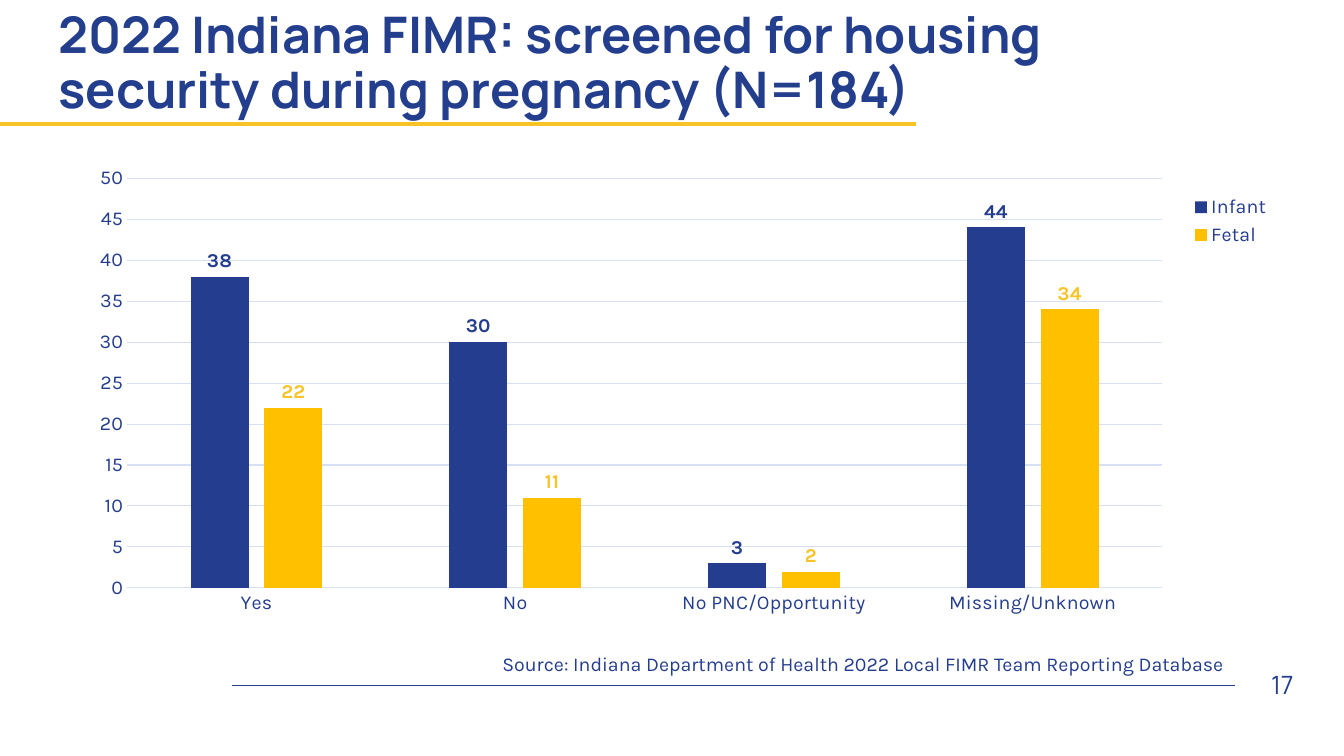
from dataclasses import dataclass

from lxml import etree
from pptx import Presentation
from pptx.chart.chart import Chart
from pptx.chart.data import CategoryChartData
from pptx.dml.color import RGBColor
from pptx.enum.chart import (XL_CHART_TYPE, XL_LABEL_POSITION,
                             XL_LEGEND_POSITION, XL_TICK_MARK)
from pptx.enum.shapes import MSO_CONNECTOR
from pptx.enum.text import MSO_ANCHOR, MSO_AUTO_SIZE, PP_ALIGN
from pptx.oxml import parse_xml
from pptx.oxml.ns import nsdecls, qn
from pptx.slide import Slide
from pptx.text.text import Font, TextFrame
from pptx.util import Cm, Pt

COLUMNS = XL_CHART_TYPE.COLUMN_CLUSTERED
OUTSIDE_END = XL_LABEL_POSITION.OUTSIDE_END
LEGEND_RIGHT = XL_LEGEND_POSITION.RIGHT
NO_TICKS = XL_TICK_MARK.NONE
STRAIGHT = MSO_CONNECTOR.STRAIGHT
TOP, MIDDLE = MSO_ANCHOR.TOP, MSO_ANCHOR.MIDDLE
NO_AUTOFIT = MSO_AUTO_SIZE.NONE
LEFT, RIGHT = PP_ALIGN.LEFT, PP_ALIGN.RIGHT

COLORS = {"navy": "243E8E", "infant": "243D8E", "gold": "F7C327",
          "fetal": "FFC000", "grid": "D7DFF5"}
HEADING_FONT, BODY_FONT = "Manrope", "Karla"
CATEGORIES = ["Yes", "No", "No PNC/Opportunity", "Missing/Unknown"]


@dataclass(frozen=True)
class Box:
    left: float
    top: float
    width: float
    height: float


@dataclass(frozen=True)
class Rule:
    left: float
    right: float
    top: float
    color: str
    weight: float


@dataclass(frozen=True)
class Note:
    text: str
    box: Box
    font: str
    size: float
    anchor: MSO_ANCHOR


@dataclass(frozen=True)
class Deaths:
    name: str
    counts: tuple[int, ...]
    fill: str
    label: str


RULES = [Rule(5.84, 31.12, 17.27, "navy", 1), Rule(0, 23.09, 3.12, "gold", 3)]
TITLE = Note("2022 Indiana FIMR: screened for housing security during pregnancy (N=184)",
             Box(1.22, 0.58, 30.33, 2.11), HEADING_FONT, 36, MIDDLE)
NOTES = [
    Note("17", Box(31.12, 16.74, 1.73, 1.02), HEADING_FONT, 18, MIDDLE),
    Note("Source: Indiana Department of Health 2022 Local FIMR Team Reporting Database",
         Box(7.49, 16.31, 23.62, 0.86), BODY_FONT, 14, TOP),
]
SERIES = [
    Deaths("Infant", (38, 30, 3, 44), "infant", "infant"),
    Deaths("Fetal", (22, 11, 2, 34), "fetal", "gold"),
]
CHART_BOX = Box(1.9, 3.99, 30.33, 11.73)
PLOT_SHARE = Box(0.043, 0.043, 0.86, 0.88)
LEGEND_SHARE = Box(0.92, 0.07, 0.08, 0.13)


def rgb(name: str) -> RGBColor:
    return RGBColor.from_string(COLORS[name])


def style_font(font: Font, name: str, size: float, color: str, bold: bool = False) -> None:
    font.name, font.size, font.bold = name, Pt(size), bold
    font.color.rgb = rgb(color)


def lengths(box: Box) -> tuple[Cm, Cm, Cm, Cm]:
    return Cm(box.left), Cm(box.top), Cm(box.width), Cm(box.height)


def write(frame: TextFrame, note: Note, align: PP_ALIGN, bold: bool = False) -> None:
    frame.word_wrap = True
    frame.auto_size = NO_AUTOFIT
    frame.vertical_anchor = note.anchor
    paragraph = frame.paragraphs[0]
    paragraph.alignment = align
    run = paragraph.add_run()
    run.text = note.text
    style_font(run.font, note.font, note.size, "navy", bold)


def add_title(slide: Slide) -> None:
    title = slide.shapes.title
    title.left, title.top, title.width, title.height = lengths(TITLE.box)
    write(title.text_frame, TITLE, LEFT, True)
    title.text_frame.paragraphs[0].line_spacing = 0.9


def add_rule(slide: Slide, rule: Rule) -> None:
    line = slide.shapes.add_connector(STRAIGHT, Cm(rule.left), Cm(rule.top),
                                      Cm(rule.right), Cm(rule.top))
    line.line.color.rgb = rgb(rule.color)
    line.line.width = Pt(rule.weight)
    etree.SubElement(line._element.spPr, qn("a:effectLst"))


def add_note(slide: Slide, note: Note) -> None:
    write(slide.shapes.add_textbox(*lengths(note.box)).text_frame, note, RIGHT)


def manual_layout(share: Box, inner: bool) -> etree._Element:
    target = '<c:layoutTarget val="inner"/>' if inner else ""
    return parse_xml(
        f'<c:layout {nsdecls("c")}><c:manualLayout>{target}'
        '<c:xMode val="edge"/><c:yMode val="edge"/>'
        f'<c:x val="{share.left}"/><c:y val="{share.top}"/>'
        f'<c:w val="{share.width}"/><c:h val="{share.height}"/>'
        '</c:manualLayout></c:layout>')


def place_parts(chart: Chart) -> None:
    plot_area = chart._chartSpace.chart.plotArea
    for layout in plot_area.findall(qn("c:layout")):
        plot_area.remove(layout)
    plot_area.insert(0, manual_layout(PLOT_SHARE, True))
    legend = chart.legend._element
    for layout in legend.findall(qn("c:layout")):
        legend.remove(layout)
    legend.find(qn("c:legendPos")).addnext(manual_layout(LEGEND_SHARE, False))


def style_axes(chart: Chart) -> None:
    counts, outcomes = chart.value_axis, chart.category_axis
    for axis in (counts, outcomes):
        axis.major_tick_mark = axis.minor_tick_mark = NO_TICKS
        style_font(axis.tick_labels.font, BODY_FONT, 14, "infant")
    counts.minimum_scale, counts.maximum_scale, counts.major_unit = 0, 50, 5
    counts.format.line.fill.background()
    for line in (counts.major_gridlines.format.line, outcomes.format.line):
        line.color.rgb = rgb("grid")
        line.width = Pt(0.75)


def add_screening_chart(slide: Slide) -> None:
    data = CategoryChartData()
    data.categories = CATEGORIES
    for deaths in SERIES:
        data.add_series(deaths.name, deaths.counts)
    chart = slide.shapes.add_chart(COLUMNS, *lengths(CHART_BOX), data).chart
    chart.has_title = False
    style_font(chart.font, BODY_FONT, 14, "infant")
    chart.has_legend = True
    chart.legend.position = LEGEND_RIGHT
    chart.legend.include_in_layout = False
    style_font(chart.legend.font, BODY_FONT, 14, "infant")
    plot = chart.plots[0]
    plot.gap_width, plot.overlap, plot.vary_by_categories = 219, -27, False
    for bars, deaths in zip(plot.series, SERIES):
        bars.format.fill.solid()
        bars.format.fill.fore_color.rgb = rgb(deaths.fill)
        labels = bars.data_labels
        labels.show_value = True
        labels.position = OUTSIDE_END
        style_font(labels.font, BODY_FONT, 14, deaths.label, True)
    style_axes(chart)
    place_parts(chart)


def main() -> None:
    deck = Presentation()
    deck.slide_width, deck.slide_height = Cm(33.87), Cm(19.05)
    slide = deck.slides.add_slide(deck.slide_layouts.get_by_name("Title Only"))
    for rule in RULES:
        add_rule(slide, rule)
    add_title(slide)
    for note in NOTES:
        add_note(slide, note)
    add_screening_chart(slide)
    deck.save("out.pptx")


if __name__ == "__main__":
    main()
